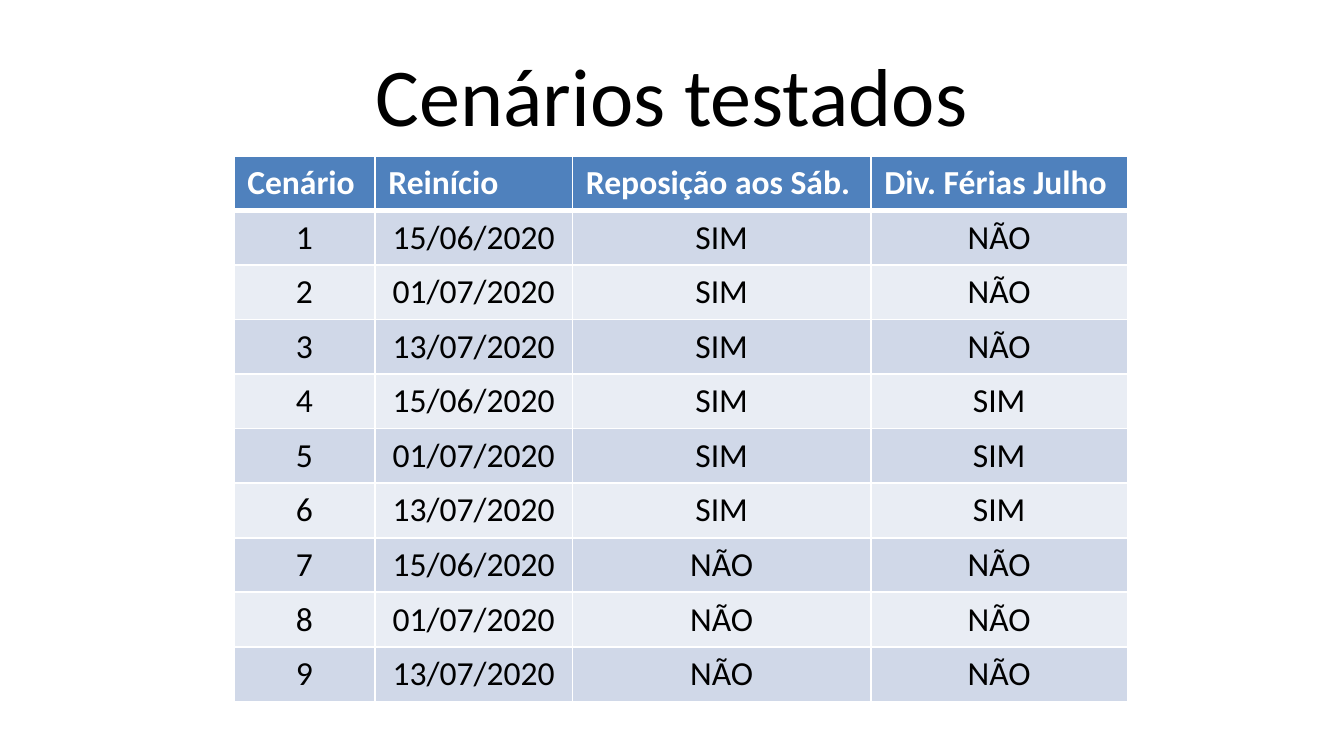
"""Build the slide of tested calendar scenarios."""
from itertools import product

from lxml.etree import SubElement
from pptx import Presentation
from pptx.dml.color import RGBColor
from pptx.enum.text import MSO_ANCHOR, PP_ALIGN
from pptx.oxml.ns import qn
from pptx.util import Inches, Pt

WHITE = RGBColor(0xFF, 0xFF, 0xFF)
BLACK = RGBColor(0x00, 0x00, 0x00)
BLUE = RGBColor(0x4F, 0x81, 0xBD)
BANDS = (RGBColor(0xD0, 0xD8, 0xE8), RGBColor(0xE9, 0xED, 0xF4))

HEADS = ("Cenário", "Reinício", "Reposição aos Sáb.", "Div. Férias Julho")
PLANS = (("SIM", "NÃO"), ("SIM", "SIM"), ("NÃO", "NÃO"))
DATES = ("15/06/2020", "01/07/2020", "13/07/2020")
WIDTHS = (1.05, 1.47, 2.22, 1.91)


class Deck:
    def __init__(self, font):
        self.font = font
        self.file = Presentation()
        self.file.slide_width = Inches(10)
        self.file.slide_height = Inches(10 * 9 / 16)
        self.slide = self.file.slides.add_slide(self.file.slide_layouts[6])

    def style(self, frame, size, color, align, bold=False):
        for para in frame.paragraphs:
            para.alignment = align
            for run in para.runs:
                run.font.name = self.font
                run.font.size = Pt(size)
                run.font.bold = bold
                run.font.color.rgb = color

    def title(self, text, left, top, width, height):
        box = self.slide.shapes.add_textbox(
            Inches(left), Inches(top), Inches(width), Inches(height))
        frame = box.text_frame
        frame.word_wrap = True
        frame.vertical_anchor = MSO_ANCHOR.MIDDLE
        frame.text = text
        self.style(frame, 44, BLACK, PP_ALIGN.CENTER)

    def border(self, cell, top, bottom):
        props = cell._tc.get_or_add_tcPr()
        for side, width in (("L", 1), ("R", 1), ("T", top), ("B", bottom)):
            line = SubElement(props, qn(f"a:ln{side}"), w=str(Pt(width)))
            fill = SubElement(line, qn("a:solidFill"))
            SubElement(fill, qn("a:srgbClr"), val=str(WHITE))

    def table(self, rows, left, top, height):
        table = self.slide.shapes.add_table(
            len(rows), len(WIDTHS), Inches(left), Inches(top),
            Inches(sum(WIDTHS)), Inches(height)).table
        for col, width in zip(table.columns, WIDTHS):
            col.width = Inches(width)
        for i, row in enumerate(rows):
            table.rows[i].height = Inches(height / len(rows))
            head = i == 0
            for j, text in enumerate(row):
                cell = table.cell(i, j)
                self.border(cell, 3 if i == 1 else 1, 3 if head else 1)
                cell.fill.solid()
                cell.fill.fore_color.rgb = BLUE if head else BANDS[(i - 1) % 2]
                cell.text_frame.text = text
                self.style(cell.text_frame, 18, WHITE if head else BLACK,
                           PP_ALIGN.LEFT if head else PP_ALIGN.CENTER, head)


def main():
    deck = Deck("Calibri")
    deck.title("Cenários testados", 0.5, 0.23, 9, 0.94)
    cases = enumerate(product(PLANS, DATES), 1)
    rows = [(str(n), date, *plan) for n, (plan, date) in cases]
    deck.table([HEADS, *rows], 1.74, 1.16, 4.06)
    deck.file.save("out.pptx")


if __name__ == "__main__":
    main()
